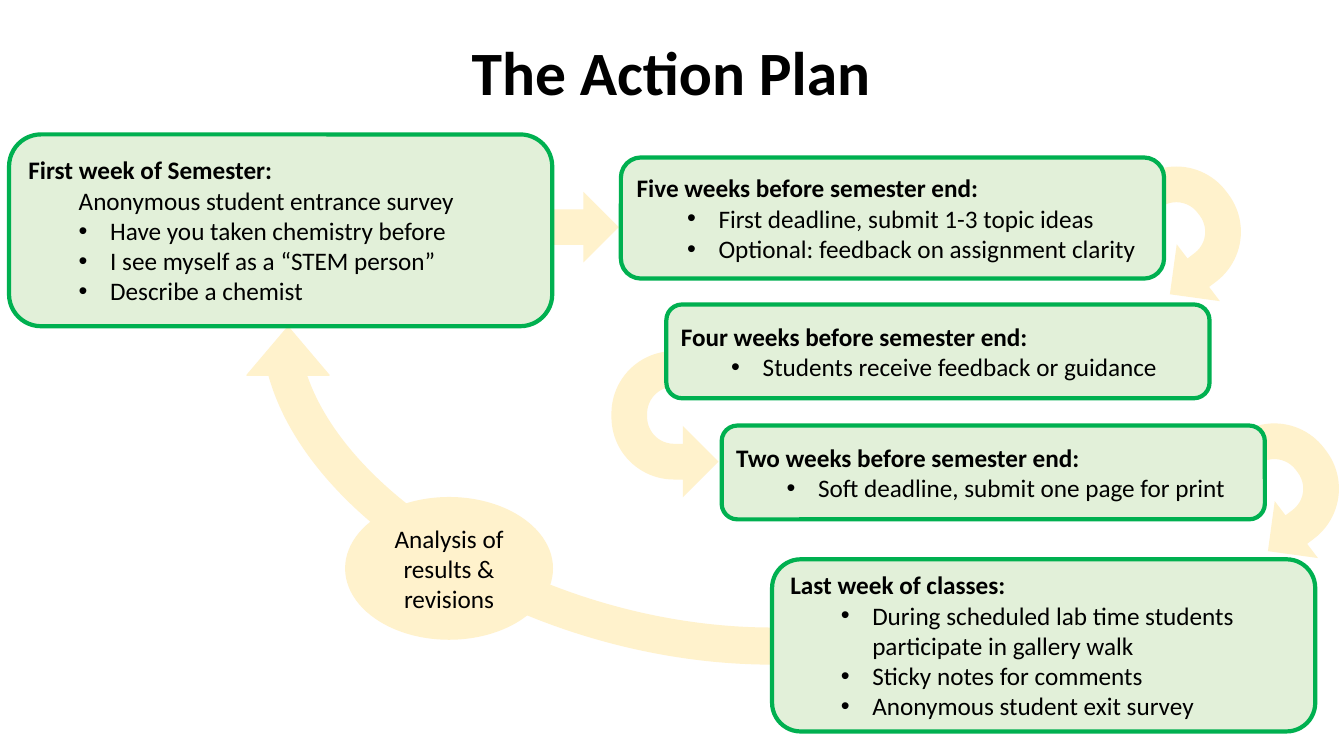
from dataclasses import dataclass

from lxml import etree
from pptx import Presentation
from pptx.dml.color import RGBColor
from pptx.enum import shapes, text
from pptx.oxml import ns
from pptx.util import Pt

SHAPE = shapes.MSO_SHAPE
ALIGN = text.PP_ALIGN


@dataclass(frozen=True)
class Theme:
    font: str = "Calibri"
    title_size: float = 44
    body_size: float = 18
    ink: str = "000000"
    paper: str = "FFFFFF"
    step_fill: str = "E2F0D9"
    step_edge: str = "00B050"
    flow: str = "FFF2CC"


def rgb(code):
    return RGBColor.from_string(code)


class ActionPlan:
    """Holds the theme and the current slide."""

    def __init__(self, slide, theme):
        self.slide = slide
        self.theme = theme

    def put_text(self, paragraph, words, size=None, bold=False, align=ALIGN.LEFT,
                 indent=0, bullet=False):
        """Fill a paragraph; indent is the text edge of a plain line or the bullet's edge."""
        paragraph.alignment = align
        run = paragraph.add_run()
        run.text = words
        run.font.name = self.theme.font
        run.font.size = Pt(size or self.theme.body_size)
        run.font.bold = bold
        run.font.color.rgb = rgb(self.theme.ink)
        if indent:
            hang = 22.5 if bullet else 0
            paragraph.level = 1
            props = paragraph._p.get_or_add_pPr()
            props.set("marL", str(Pt(indent + hang)))
            props.set("indent", str(Pt(-hang)))
            if bullet:
                etree.SubElement(props, ns.qn("a:buFont")).set("typeface", "Arial")
                etree.SubElement(props, ns.qn("a:buChar")).set("char", "•")

    def title(self, words, left, top, width, height):
        heading = self.slide.shapes.title
        heading.left, heading.top = Pt(left), Pt(top)
        heading.width, heading.height = Pt(width), Pt(height)
        heading.text_frame.vertical_anchor = text.MSO_ANCHOR.MIDDLE
        line = heading.text_frame.paragraphs[0]
        line.line_spacing = 0.9
        self.put_text(line, words, size=self.theme.title_size, bold=True, align=ALIGN.CENTER)

    def shape(self, kind, left, top, width, height, fill, edge=None, weight=1, turn=0):
        figure = self.slide.shapes.add_shape(kind, Pt(left), Pt(top), Pt(width), Pt(height))
        figure.shadow.inherit = False
        figure.fill.solid()
        figure.fill.fore_color.rgb = rgb(fill)
        if edge:
            figure.line.color.rgb = rgb(edge)
            figure.line.width = Pt(weight)
        else:
            figure.line.fill.background()
        figure.rotation = turn
        return figure

    def uturn(self, left, top, turn, mirrored=False):
        arrow = self.shape(SHAPE.U_TURN_ARROW, left, top, 104.5, 102, self.theme.flow, turn=turn)
        if mirrored:
            arrow._element.spPr.find(ns.qn("a:xfrm")).set("flipH", "1")

    def quarter_curve(self, start, end, weight):
        """Band that leaves start horizontally and reaches end vertically."""
        band = self.slide.shapes.add_connector(
            shapes.MSO_CONNECTOR.CURVE, *(Pt(n) for n in (*start, *end)))
        band.line.color.rgb = rgb(self.theme.flow)
        band.line.width = Pt(weight)
        props = band._element.spPr
        props.find(ns.qn("a:prstGeom")).set("prst", "curvedConnector2")
        etree.SubElement(props, ns.qn("a:effectLst"))

    def step(self, left, top, height, heading, tasks, intro=None):
        box = self.shape(SHAPE.ROUNDED_RECTANGLE, left, top, 388, height,
                         self.theme.step_fill, self.theme.step_edge, 3)
        frame = box.text_frame
        frame.word_wrap = True
        frame.vertical_anchor = text.MSO_ANCHOR.MIDDLE
        self.put_text(frame.paragraphs[0], heading, bold=True)
        if intro:
            self.put_text(frame.add_paragraph(), intro, indent=36)
        for task in tasks:
            self.put_text(frame.add_paragraph(), task, indent=36, bullet=True)

    def oval(self, words, left, top, width, height):
        frame = self.shape(SHAPE.OVAL, left, top, width, height, self.theme.flow).text_frame
        frame.word_wrap = True
        self.put_text(frame.paragraphs[0], words, align=ALIGN.CENTER)


STEPS = [
    (6.5, 96, 137, "First week of Semester:",
     ["Have you taken chemistry before", "I see myself as a “STEM person”", "Describe a chemist"],
     "Anonymous student entrance survey"),
    (443.5, 112.5, 86.5, "Five weeks before semester end:",
     ["First deadline, submit 1-3 topic ideas", "Optional: feedback on assignment clarity"]),
    (476, 217.5, 67, "Four weeks before semester end:",
     ["Students receive feedback or guidance"]),
    (515.5, 304, 67, "Two weeks before semester end:",
     ["Soft deadline, submit one page for print"]),
    (551.5, 399.5, 123, "Last week of classes:",
     ["During scheduled lab time students participate in gallery walk",
      "Sticky notes for comments", "Anonymous student exit survey"]),
]


def main():
    deck = Presentation()
    deck.slide_width, deck.slide_height = Pt(960), Pt(540)
    theme = Theme()
    plan = ActionPlan(deck.slides.add_slide(deck.slide_layouts[5]), theme)

    plan.title("The Action Plan", 65.5, 1.5, 828, 104.5)
    plan.shape(SHAPE.RIGHT_ARROW, 340, 137, 102, 50.5, theme.flow)
    plan.uturn(787.5, 122.5, 52.8)
    plan.uturn(435.5, 252, 270, mirrored=True)
    plan.uturn(857.5, 306, 52.8)

    plan.quarter_curve((551.5, 461.5), (200, 232.5), 26.5)
    plan.shape(SHAPE.RECTANGLE, 177, 232.5, 58.5, 28, theme.paper, theme.paper)
    plan.shape(SHAPE.ISOSCELES_TRIANGLE, 176.5, 233.5, 58.5, 34.5, theme.flow, theme.flow)

    for step in STEPS:
        plan.step(*step)
    plan.oval("Analysis of results & revisions", 246.5, 355, 148.5, 102)
    deck.save("out.pptx")


if __name__ == "__main__":
    main()
